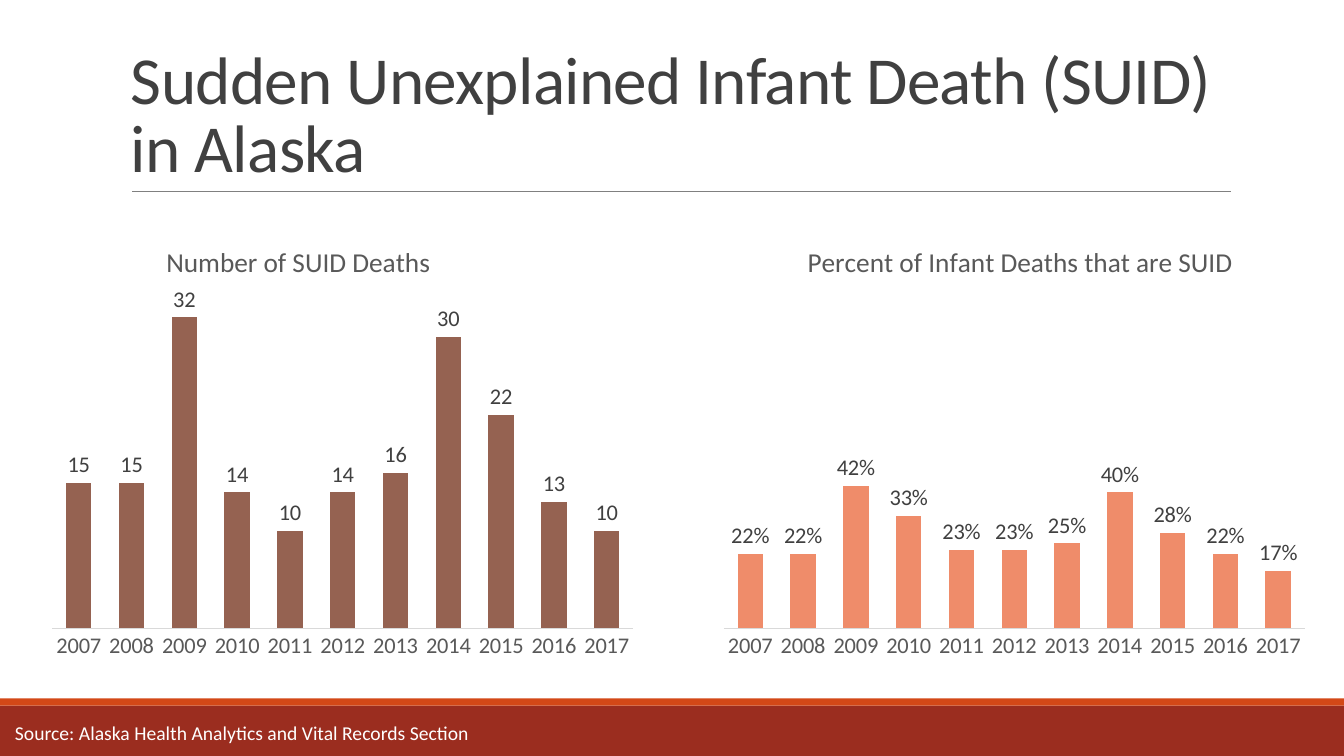
from dataclasses import dataclass

from lxml import etree
from pptx import Presentation, util as u
from pptx.chart.data import CategoryChartData
from pptx.dml.color import RGBColor
from pptx.enum import chart as charts, shapes, text
from pptx.oxml import parse_xml
from pptx.oxml.ns import qn

CHART_NS = "http://schemas.openxmlformats.org/drawingml/2006/chart"


@dataclass(frozen=True)
class Theme:
    font: str = "Calibri"
    title_size: float = 48
    chart_title_size: float = 19.5
    label_size: float = 16
    source_size: float = 14
    title: str = "404040"
    muted: str = "595959"
    white: str = "FFFFFF"
    rule: str = "808080"
    axis: str = "D9D9D9"
    band: str = "9B2D1F"
    stripe: str = "D34817"
    count: str = "956251"
    share: str = "EF8C6A"


THEME = Theme()
WIDTH, HEIGHT = 13.33, 7.5
YEARS = [str(year) for year in range(2007, 2018)]
DEATHS = [15, 15, 32, 14, 10, 14, 16, 30, 22, 13, 10]
SHARES = [0.22, 0.22, 0.42, 0.33, 0.23, 0.23, 0.25, 0.40, 0.28, 0.22, 0.17]


def inches(box):
    return [u.Inches(length) for length in box]


def set_font(font, size, color):
    font.name, font.size, font.bold = THEME.font, u.Pt(size), False
    font.color.rgb = RGBColor.from_string(color)


def add_text(slide, box, content, *, size, color, anchor=text.MSO_ANCHOR.TOP,
             wrap=True, line_spacing=1.0, tracking=0):
    """Tracking is in points."""
    frame = slide.shapes.add_textbox(*inches(box)).text_frame
    frame.word_wrap, frame.vertical_anchor = wrap, anchor
    paragraph = frame.paragraphs[0]
    paragraph.line_spacing = line_spacing
    run = paragraph.add_run()
    run.text = content
    set_font(run.font, size, color)
    if tracking:
        run.font._element.set("spc", str(int(tracking * 100)))


def add_bar(slide, box, color):
    bar = slide.shapes.add_shape(shapes.MSO_SHAPE.RECTANGLE, *inches(box))
    bar.shadow.inherit = False
    bar.fill.solid()
    bar.fill.fore_color.rgb = RGBColor.from_string(color)
    bar.line.fill.background()


def add_header(slide, box, content):
    left, top, width, height = box
    add_text(slide, box, content, size=THEME.title_size, color=THEME.title,
             anchor=text.MSO_ANCHOR.BOTTOM, line_spacing=0.85, tracking=-0.5)
    bottom = top + height
    rule = slide.shapes.add_connector(
        shapes.MSO_CONNECTOR.STRAIGHT,
        *inches((left + 0.11, bottom, left + width + 0.01, bottom)))
    rule.line.color.rgb = RGBColor.from_string(THEME.rule)
    rule.line.width = u.Pt(0.5)
    etree.SubElement(rule._element.spPr, qn("a:effectLst"))


def add_footer(slide, box, content):
    left, top, width, height = box
    stripe = 0.07
    add_bar(slide, (left, top + stripe, width, height - stripe), THEME.band)
    add_bar(slide, (left, top, width, stripe), THEME.stripe)
    add_text(slide, (left + 0.05, top + 0.17, 4.75, 0.34), content,
             size=THEME.source_size, color=THEME.white, wrap=False)


def manual_layout(**shares):
    """Layout element whose x, y, w and h are shares of the chart."""
    modes = '<c:xMode val="edge"/><c:yMode val="edge"/>'
    target = '<c:layoutTarget val="inner"/>' if "w" in shares else ""
    lengths = "".join(f'<c:{key} val="{share}"/>' for key, share in shares.items())
    return parse_xml(f'<c:layout xmlns:c="{CHART_NS}"><c:manualLayout>{target}{modes}'
                     f'{lengths}</c:manualLayout></c:layout>')


def place(element, layout, position):
    for old in element.findall(qn("c:layout")):
        element.remove(old)
    element.insert(position, layout)


def add_column_chart(slide, box, title, values, *, color, maximum, title_left,
                     number_format):
    data = CategoryChartData()
    data.categories = YEARS
    data.add_series("Series 1", values)
    chart = slide.shapes.add_chart(
        charts.XL_CHART_TYPE.COLUMN_CLUSTERED, *inches(box), data).chart
    chart.has_legend = False
    set_font(chart.font, THEME.label_size, THEME.title)

    chart.has_title = True
    run = chart.chart_title.text_frame.paragraphs[0].add_run()
    run.text = title
    set_font(run.font, THEME.chart_title_size, THEME.muted)
    chart.chart_title.include_in_layout = False
    place(chart.chart_title._element, manual_layout(x=title_left, y=0.05), 1)
    plot_area = chart._chartSpace.chart.plotArea
    place(plot_area, manual_layout(x=0.02, y=0.16, w=0.96, h=0.75), 0)

    years = chart.category_axis
    years.major_tick_mark = charts.XL_TICK_MARK.NONE
    set_font(years.tick_labels.font, THEME.label_size, THEME.muted)
    years.format.line.color.rgb = RGBColor.from_string(THEME.axis)
    years.format.line.width = u.Pt(0.75)
    scale = chart.value_axis
    scale.minimum_scale, scale.maximum_scale = 0, maximum
    scale.has_major_gridlines = False
    scale.visible = False

    plot = chart.plots[0]
    plot.gap_width, plot.overlap, plot.vary_by_categories = 108, -27, False
    fill = plot.series[0].format.fill
    fill.solid()
    fill.fore_color.rgb = RGBColor.from_string(color)
    plot.has_data_labels = True
    labels = plot.data_labels
    labels.show_value = True
    labels.position = charts.XL_LABEL_POSITION.OUTSIDE_END
    labels.number_format, labels.number_format_is_linked = number_format, False
    set_font(labels.font, THEME.label_size, THEME.title)


def build_slide(presentation):
    slide = presentation.slides.add_slide(presentation.slide_layouts[6])
    add_footer(slide, (0, 6.93, WIDTH, HEIGHT - 6.93),
               "Source: Alaska Health Analytics and Vital Records Section")
    add_header(slide, (1.2, 0.31, 11, 1.59),
               "Sudden Unexplained Infant Death (SUID) in Alaska")
    add_column_chart(slide, (0.4, 2.14, 6, 4.5), "Number of SUID Deaths", DEATHS,
                     color=THEME.count, maximum=35, title_left=0.2,
                     number_format="0")
    add_column_chart(slide, (7.06, 2.14, 6, 4.5),
                     "Percent of Infant Deaths that are SUID", SHARES,
                     color=THEME.share, maximum=1, title_left=0.15,
                     number_format="0%")


def main():
    presentation = Presentation()
    presentation.slide_width, presentation.slide_height = inches((WIDTH, HEIGHT))
    build_slide(presentation)
    presentation.save("out.pptx")


if __name__ == "__main__":
    main()
